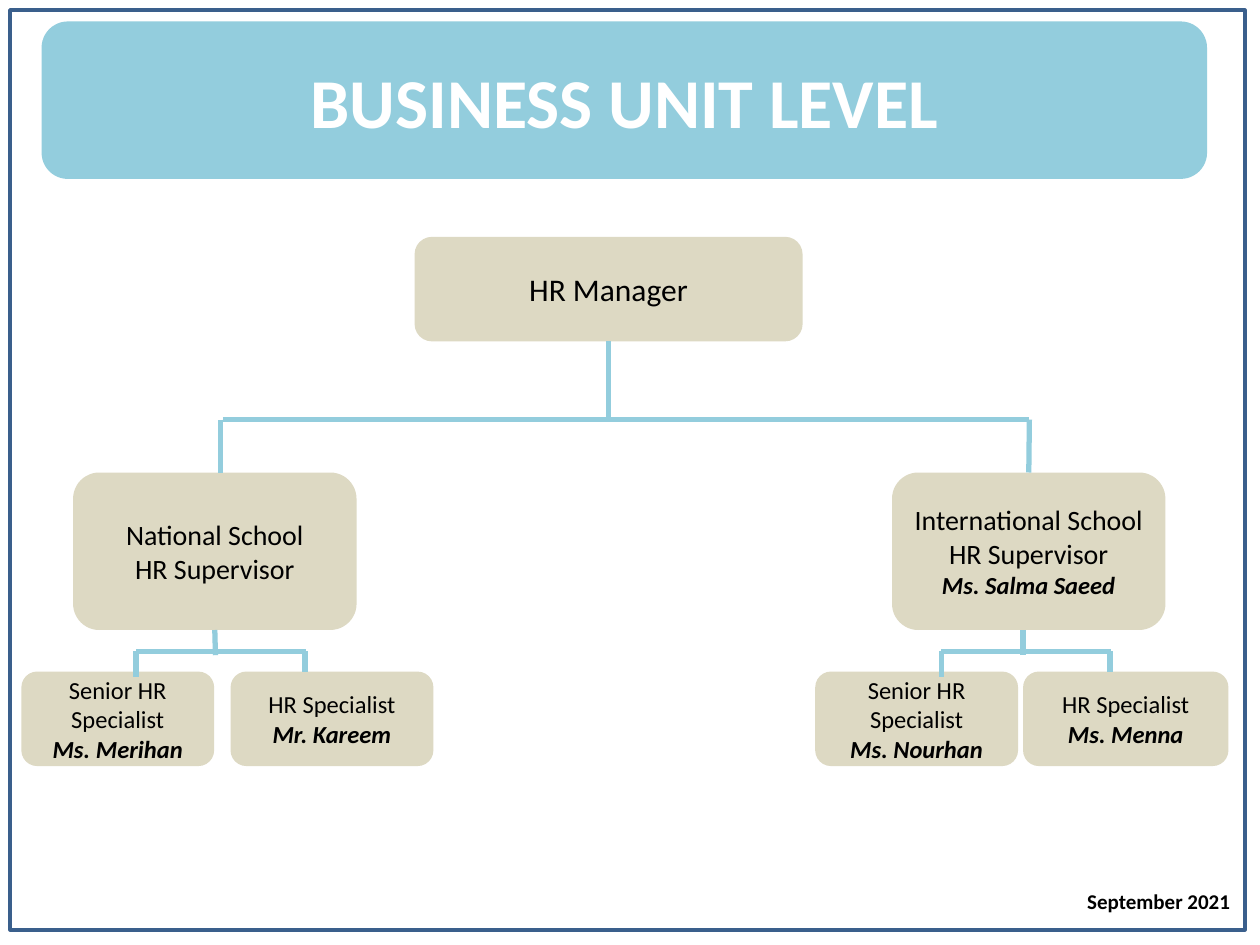
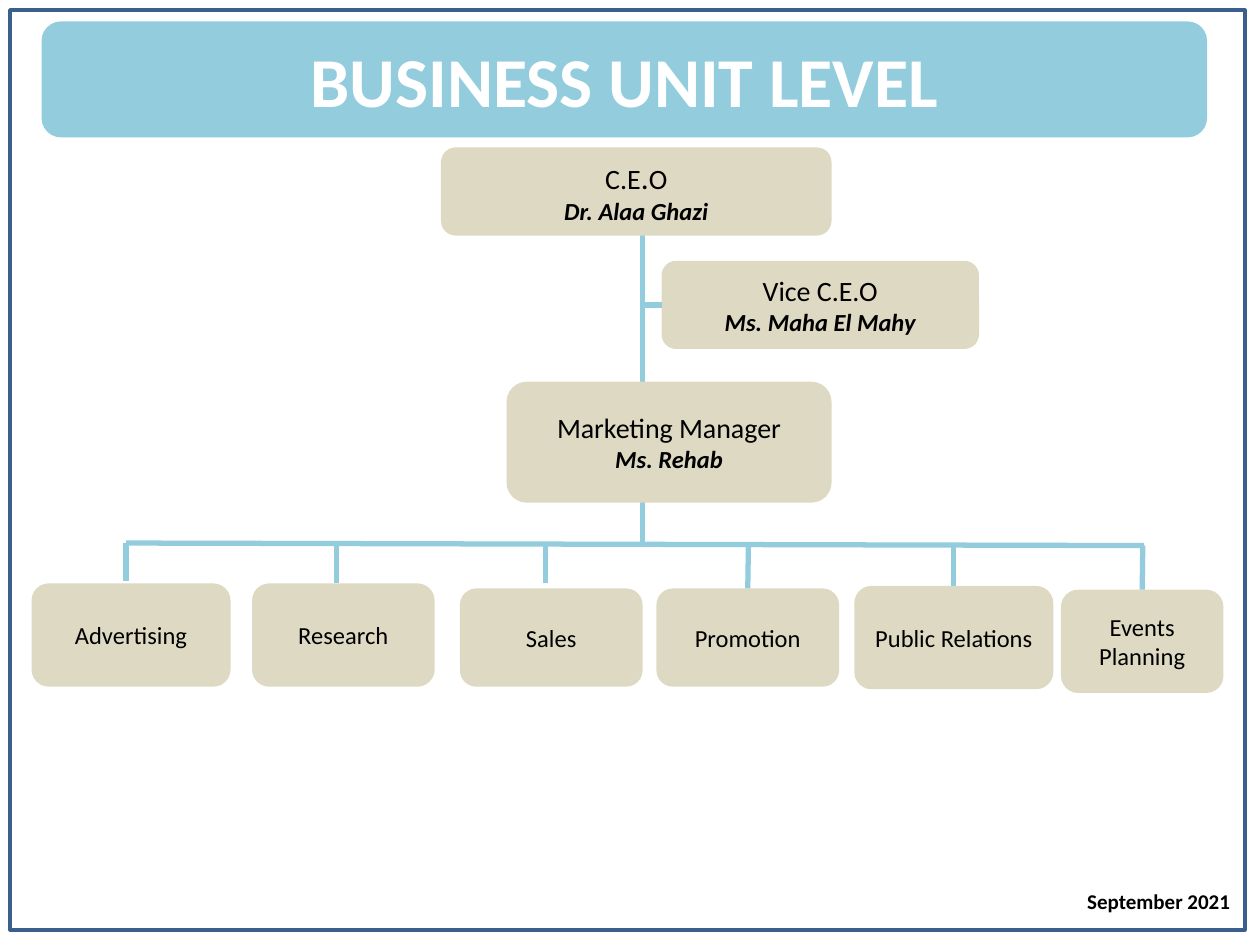
"""Build two organisation chart slides: the HR unit and the marketing unit."""
from lxml import etree
from pptx import Presentation
from pptx.dml.color import RGBColor
from pptx.enum.shapes import MSO_CONNECTOR, MSO_SHAPE
from pptx.enum.text import MSO_ANCHOR, MSO_AUTO_SIZE, PP_ALIGN
from pptx.oxml.ns import qn
from pptx.util import Inches, Pt

STRAIGHT = MSO_CONNECTOR.STRAIGHT
RECTANGLE = MSO_SHAPE.RECTANGLE
ROUNDED = MSO_SHAPE.ROUNDED_RECTANGLE
MIDDLE = MSO_ANCHOR.MIDDLE
NO_AUTOFIT = MSO_AUTO_SIZE.NONE
FIT_SHAPE = MSO_AUTO_SIZE.SHAPE_TO_FIT_TEXT
CENTER = PP_ALIGN.CENTER

SKY = RGBColor(0x93, 0xCD, 0xDD)
SAND = RGBColor(0xDD, 0xD9, 0xC3)
NAVY = RGBColor(0x3A, 0x5F, 0x8C)
BLACK = RGBColor(0x00, 0x00, 0x00)
WHITE = RGBColor(0xFF, 0xFF, 0xFF)
FONT = "Calibri"
TOP, LEFT, BOTTOM = 0, 1, 2


def add_box(slide, place, role_lines, name=None):
    """Add a staff box; each role line is a list of (text, size) runs."""
    box = slide.shapes.add_shape(ROUNDED, *map(Inches, place))
    box.shadow.inherit = False
    box.fill.solid()
    box.fill.fore_color.rgb = SAND
    box.line.fill.background()
    frame = box.text_frame
    frame.word_wrap = True
    frame.vertical_anchor = MIDDLE
    lines = role_lines + ([[(name, 14)]] if name else [])
    for index, line in enumerate(lines):
        para = frame.paragraphs[0] if index == 0 else frame.add_paragraph()
        para.alignment = CENTER
        is_name = index == len(role_lines)
        for text, size in line:
            span = para.add_run()
            span.text = text
            span.font.name = FONT
            span.font.size = Pt(size)
            span.font.color.rgb = BLACK
            span.font.bold = span.font.italic = is_name
    return box


def add_line(slide, x1, y1, x2, y2):
    """Add a plain organisation chart line."""
    line = slide.shapes.add_connector(STRAIGHT, *map(Inches, (x1, y1, x2, y2)))
    line.line.color.rgb = SKY
    line.line.width = Pt(3)
    etree.SubElement(line._element.spPr, qn("a:effectLst"))
    return line


deck = Presentation()
deck.slide_width = Inches(10)
deck.slide_height = Inches(7.5)

pages = []
for band_height in (1.25, 0.92):
    page = deck.slides.add_slide(deck.slide_layouts[5])
    pages.append(page)

    border = page.shapes.add_shape(RECTANGLE, Inches(0.08), Inches(0.08), Inches(9.8), Inches(7.3))
    border.shadow.inherit = False
    border.fill.background()
    border.line.color.rgb = NAVY
    border.line.width = Pt(2)

    band_place = [Inches(length) for length in (0.33, 0.17, 9.25, band_height)]
    band = page.shapes.add_shape(ROUNDED, *band_place)
    band.shadow.inherit = False
    band.fill.solid()
    band.fill.fore_color.rgb = SKY
    band.line.fill.background()

    title = page.shapes.title
    title.left, title.top, title.width, title.height = band_place
    band._element.addnext(title._element)
    title.text_frame.auto_size = NO_AUTOFIT
    title.text_frame.vertical_anchor = MIDDLE
    para = title.text_frame.paragraphs[0]
    para.alignment = CENTER
    span = para.add_run()
    span.text = "BUSINESS UNIT LEVEL"
    span.font.name = FONT
    span.font.size = Pt(40)
    span.font.bold = True
    span.font.color.rgb = WHITE

    date = page.shapes.add_textbox(Inches(8.53), Inches(7), Inches(1.35), Inches(0.5))
    date.text_frame.word_wrap = False
    date.text_frame.auto_size = FIT_SHAPE
    span = date.text_frame.paragraphs[0].add_run()
    span.text = "September 2021"
    span.font.name = FONT
    span.font.size = Pt(12)
    span.font.bold = True
    span.font.color.rgb = BLACK

hr_page, marketing_page = pages

hr_manager = add_box(hr_page, (3.29, 1.88, 3.08, 0.83), [[("HR Manager", 18)]])
national = add_box(hr_page, (0.58, 3.75, 2.25, 1.25),
                   [[("National School", 16)], [("HR Supervisor", 16)]])
international = add_box(hr_page, (7.08, 3.75, 2.17, 1.25),
                        [[("International School", 16)], [("HR Supervisor", 16)]],
                        "Ms. Salma Saeed")

add_line(hr_page, 4.83, 2.71, 4.83, 3.35).begin_connect(hr_manager, BOTTOM)
add_line(hr_page, 1.77, 3.33, 8.17, 3.33)
add_line(hr_page, 1.75, 3.33, 1.75, 3.75)
add_line(hr_page, 8.17, 3.33, 8.17, 3.75).end_connect(international, TOP)

specialists = [
    (0.17, 1.53, "Senior HR Specialist", "Ms. Merihan"),
    (1.83, 1.61, "HR Specialist", "Mr. Kareem"),
    (6.47, 1.61, "Senior HR Specialist", "Ms. Nourhan"),
    (8.12, 1.63, "HR Specialist", "Ms. Menna"),
]
for left, width, role, name in specialists:
    add_box(hr_page, (left, 5.33, width, 0.75), [[(role, 14)]], name)

add_line(hr_page, 1.71, 5, 1.71, 5.2).begin_connect(national, BOTTOM)
add_line(hr_page, 8.12, 5, 8.12, 5.2)
for bus_left in (1.08, 7.47):
    add_line(hr_page, bus_left, 5.17, bus_left + 1.35, 5.17)
    add_line(hr_page, bus_left, 5.17, bus_left, 5.37)
    add_line(hr_page, bus_left + 1.34, 5.17, bus_left + 1.34, 5.33)

add_line(marketing_page, 5.1, 1.79, 5.1, 4.31)
add_box(marketing_page, (3.5, 1.17, 3.1, 0.7),
        [[("C.E", 16), (".", 18), ("O", 16)]], "Dr. Alaa Ghazi")
vice = add_box(marketing_page, (5.25, 2.07, 2.52, 0.7), [[("Vice C.E.O", 16)]], "Ms. Maha El Mahy")
add_box(marketing_page, (4.02, 3.03, 2.58, 0.96), [[("Marketing Manager", 16)]], "Ms. Rehab")
add_line(marketing_page, 5.1, 2.42, 5.25, 2.42).end_connect(vice, LEFT)

add_line(marketing_page, 1, 4.31, 9.08, 4.33)
departments = [
    ("Advertising", (0.25, 4.63, 1.58, 0.82), 1, 4.31, False),
    ("Research", (2, 4.63, 1.45, 0.82), 2.67, 4.33, False),
    ("Sales", (3.65, 4.67, 1.45, 0.78), 4.33, 4.33, False),
    ("Promotion", (5.21, 4.67, 1.45, 0.78), 5.94, 4.33, True),
    ("Public Relations", (6.78, 4.65, 1.58, 0.82), 7.57, 4.33, True),
    ("Events Planning", (8.42, 4.68, 1.29, 0.82), 9.07, 4.33, True),
]
for department, place, stem_x, stem_top, is_centred in departments:
    box = add_box(marketing_page, place, [[(department, 14)]])
    stem = add_line(marketing_page, stem_x, stem_top, stem_x, stem_top + 0.3)
    if is_centred:
        stem.end_connect(box, TOP)

deck.save("out.pptx")
